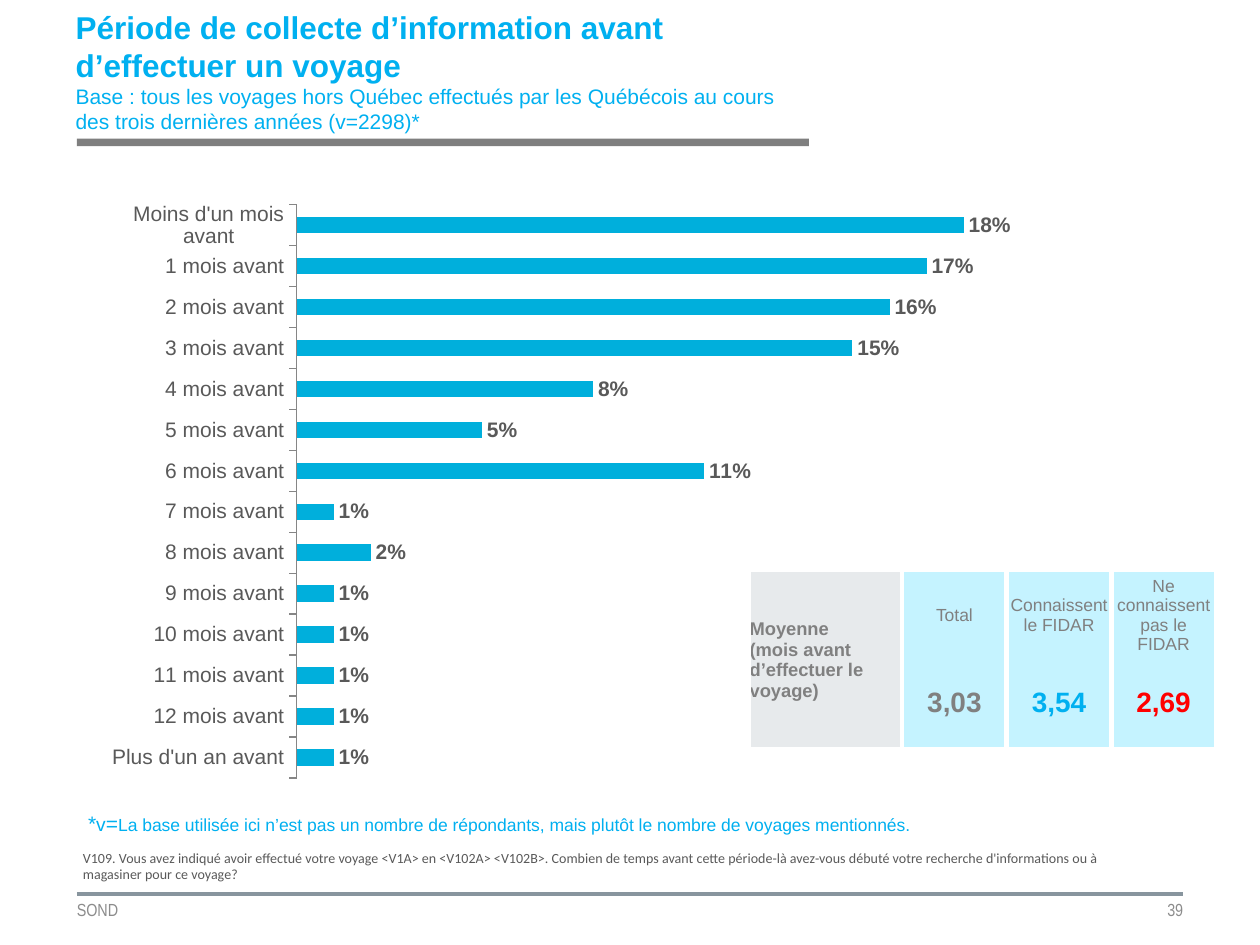
from dataclasses import dataclass

from lxml import etree
from pptx import Presentation
from pptx.chart.data import CategoryChartData
from pptx.dml.color import RGBColor
from pptx.enum.chart import XL_CHART_TYPE, XL_LABEL_POSITION, XL_TICK_MARK
from pptx.enum.shapes import MSO_CONNECTOR, MSO_SHAPE
from pptx.enum.text import MSO_ANCHOR, MSO_AUTO_SIZE, PP_ALIGN
from pptx.oxml import parse_xml
from pptx.oxml.ns import nsdecls, qn
from pptx.util import Inches, Pt

LEFT, MID, RIGHT = PP_ALIGN.LEFT, PP_ALIGN.CENTER, PP_ALIGN.RIGHT
CENTRE, TOP = MSO_ANCHOR.MIDDLE, MSO_ANCHOR.TOP
BAR = XL_CHART_TYPE.BAR_CLUSTERED
INK = {
    "blue": "00B0F0", "bar": "00AFDC", "rule": "88959E", "band": "7F7F7F",
    "foot": "8C8C8C", "note": "595959", "axis": "868686", "cell": "808080",
    "red": "FF0000", "grey": "E7EAEC", "pale": "C5F3FF", "white": "FFFFFF",
}


@dataclass
class Run:
    text: str
    size: float


@dataclass
class Box:
    x: float
    y: float
    w: float
    h: float
    runs: list[Run]
    face: str
    ink: str
    pad: bool = True
    align: PP_ALIGN = LEFT


@dataclass
class Mean:
    head: str
    value: str
    ink: str


BOXES = [
    Box(0.61, 7.09, 2.8, 0.26, [Run("SOND", 10)], "Arial Narrow", "foot", False),
    Box(6.55, 7.09, 2.84, 0.26, [Run("39", 10)], "Arial Narrow", "foot", False, RIGHT),
    Box(0.56, 6.69, 8.71, 0.37, [Run(
        "V109. Vous avez indiqué avoir effectué votre voyage <V1A> en <V102A> <V102B>. "
        "Combien de temps avant cette période-là avez-vous débuté votre recherche "
        "d'informations ou à magasiner pour ce voyage?", 8)], "Calibri", "note"),
    Box(0.6, 6.38, 8.71, 0.3, [
        Run("*", 12), Run("v", 11), Run("=", 12),
        Run("La base utilisée ici n’est pas un nombre de répondants, "
            "mais plutôt le nombre de voyages mentionnés.", 10)], "Arial", "blue"),
]
MEANS = [
    Mean("Total", "3,03", "cell"),
    Mean("Connaissent le FIDAR", "3,54", "blue"),
    Mean("Ne connaissent pas le FIDAR", "2,69", "red"),
]
CATS = (["Plus d'un an avant"] + [f"{n} mois avant" for n in range(12, 0, -1)]
        + ["Moins d'un mois avant"])
SHARES = [1, 1, 1, 1, 1, 2, 1, 11, 5, 8, 15, 16, 17, 18]


def tint(name: str) -> RGBColor:
    return RGBColor.from_string(INK[name])


def style(font, size: float, ink: str, bold: bool = False, face: str = "Arial") -> None:
    font.name, font.size, font.bold = face, Pt(size), bold
    font.color.rgb = tint(ink)


def strip(frame) -> None:
    frame.margin_left = frame.margin_right = 0
    frame.margin_top = frame.margin_bottom = 0


def add_title(slide) -> None:
    title = slide.shapes.title
    title.left, title.top = Inches(0.6), Inches(0.36)
    title.width, title.height = Inches(5.8), Inches(0.6)
    frame = title.text_frame
    frame.word_wrap, frame.auto_size = True, MSO_AUTO_SIZE.NONE
    frame.vertical_anchor = CENTRE
    strip(frame)
    frame.margin_bottom = Inches(0.19)
    frame.text = ("Période de collecte d’information avant d’effectuer un voyage\n"
                  "Base : tous les voyages hors Québec effectués par les Québécois "
                  "au cours des trois dernières années (v=2298)*")
    for para, size, bold in zip(frame.paragraphs, (18, 12), (True, False)):
        para.alignment = LEFT
        para.space_before = Pt(0)
        style(para.font, size, "blue", bold)


def add_box(slide, box: Box) -> None:
    shape = slide.shapes.add_textbox(*map(Inches, (box.x, box.y, box.w, box.h)))
    frame = shape.text_frame
    frame.word_wrap = True
    frame.vertical_anchor = TOP if box.pad else CENTRE
    if not box.pad:
        strip(frame)
    para = frame.paragraphs[0]
    para.alignment = box.align
    for part in box.runs:
        run = para.add_run()
        run.text = part.text
        style(run.font, part.size, box.ink, face=box.face)


def add_rule(slide, y: float) -> None:
    line = slide.shapes.add_connector(
        MSO_CONNECTOR.STRAIGHT, Inches(0.61), Inches(y), Inches(9.39), Inches(y))
    line.line.color.rgb = tint("rule")
    line.line.width = Pt(1.5)
    etree.SubElement(line._element.spPr, qn("a:effectLst"))


def add_band(slide) -> None:
    band = slide.shapes.add_shape(
        MSO_SHAPE.RECTANGLE, Inches(0.61), Inches(1.1), Inches(5.81), Inches(0.06))
    band.shadow.inherit = False
    band.fill.solid()
    band.fill.fore_color.rgb = tint("band")
    band.line.fill.background()


def add_bars(slide) -> None:
    data = CategoryChartData(number_format="0%")
    data.categories = CATS
    data.add_series("Series 1", [share / 100 for share in SHARES])
    chart = slide.shapes.add_chart(
        BAR, Inches(0.75), Inches(1.53), Inches(7.64), Inches(4.74), data).chart
    chart.has_legend = chart.has_title = False
    chart.font.name, chart.font.size = "Calibri", Pt(18)
    axis = chart.category_axis
    axis.major_tick_mark = XL_TICK_MARK.OUTSIDE
    axis.has_major_gridlines = False
    axis.format.line.color.rgb = tint("axis")
    style(axis.tick_labels.font, 12, "note")
    scale = chart.value_axis
    scale.minimum_scale, scale.maximum_scale = 0, 0.2
    scale.has_major_gridlines = scale.visible = False
    plot = chart.plots[0]
    plot.gap_width, plot.vary_by_categories = 150, False
    fill = plot.series[0].format.fill
    fill.solid()
    fill.fore_color.rgb = tint("bar")
    plot.has_data_labels = True
    labels = plot.data_labels
    labels.show_value, labels.position = True, XL_LABEL_POSITION.OUTSIDE_END
    labels.number_format, labels.number_format_is_linked = "0%", False
    style(labels.font, 12, "note", True)
    area = chart._chartSpace.chart.plotArea
    for old in area.findall(qn("c:layout")):
        area.remove(old)
    spots = {"x": 0.21, "y": 0.02, "w": 0.77, "h": 0.96}
    sizes = "".join(f'<c:{key} val="{val}"/>' for key, val in spots.items())
    area.insert(0, parse_xml(
        f'<c:layout {nsdecls("c")}><c:manualLayout><c:layoutTarget val="inner"/>'
        f'<c:xMode val="edge"/><c:yMode val="edge"/>{sizes}</c:manualLayout></c:layout>'))


def edge(cell) -> None:
    white = f'<a:solidFill><a:srgbClr val="{INK["white"]}"/></a:solidFill>'
    sides = {"lnL": white, "lnR": white, "lnT": "<a:noFill/>", "lnB": "<a:noFill/>"}
    for spot, (side, paint) in enumerate(sides.items()):
        cell._tc.get_or_add_tcPr().insert(spot, parse_xml(
            f'<a:{side} {nsdecls("a")} w="{Pt(3)}">{paint}</a:{side}>'))


def set_cell(cell, text: str, size: float, ink: str, bold: bool,
             fill: str = "pale", align: PP_ALIGN = MID) -> None:
    cell.text = text
    cell.vertical_anchor = CENTRE
    cell.margin_left = cell.margin_right = cell.margin_top = Inches(0.01)
    cell.margin_bottom = 0
    cell.fill.solid()
    cell.fill.fore_color.rgb = tint(fill)
    for para in cell.text_frame.paragraphs:
        para.alignment = align
        style(para.font, size, ink, bold)


def add_means(slide) -> None:
    table = slide.shapes.add_table(
        2, 4, Inches(5.94), Inches(4.54), Inches(3.71), Inches(1.22)).table
    table.first_row = table.horz_banding = False
    for col, width in zip(table.columns, (1.22, 0.83, 0.83, 0.83)):
        col.width = Inches(width)
    for row, height in zip(table.rows, (0.52, 0.7)):
        row.height = Inches(height)
    table.cell(0, 0).merge(table.cell(1, 0))
    set_cell(table.cell(0, 0), "Moyenne\n(mois avant d’effectuer le voyage)",
             10.5, "cell", True, "grey", LEFT)
    for col, mean in enumerate(MEANS, 1):
        set_cell(table.cell(0, col), mean.head, 10, "cell", False)
        set_cell(table.cell(1, col), mean.value, 16, mean.ink, True)
    for cell in table.iter_cells():
        edge(cell)


def main() -> None:
    deck = Presentation()
    deck.slide_width, deck.slide_height = Inches(10), Inches(7.5)
    slide = deck.slides.add_slide(deck.slide_layouts[5])
    add_title(slide)
    for y in (7.09, 7.1):
        add_rule(slide, y)
    add_band(slide)
    add_bars(slide)
    for box in BOXES:
        add_box(slide, box)
    add_means(slide)
    deck.save("out.pptx")


if __name__ == "__main__":
    main()
